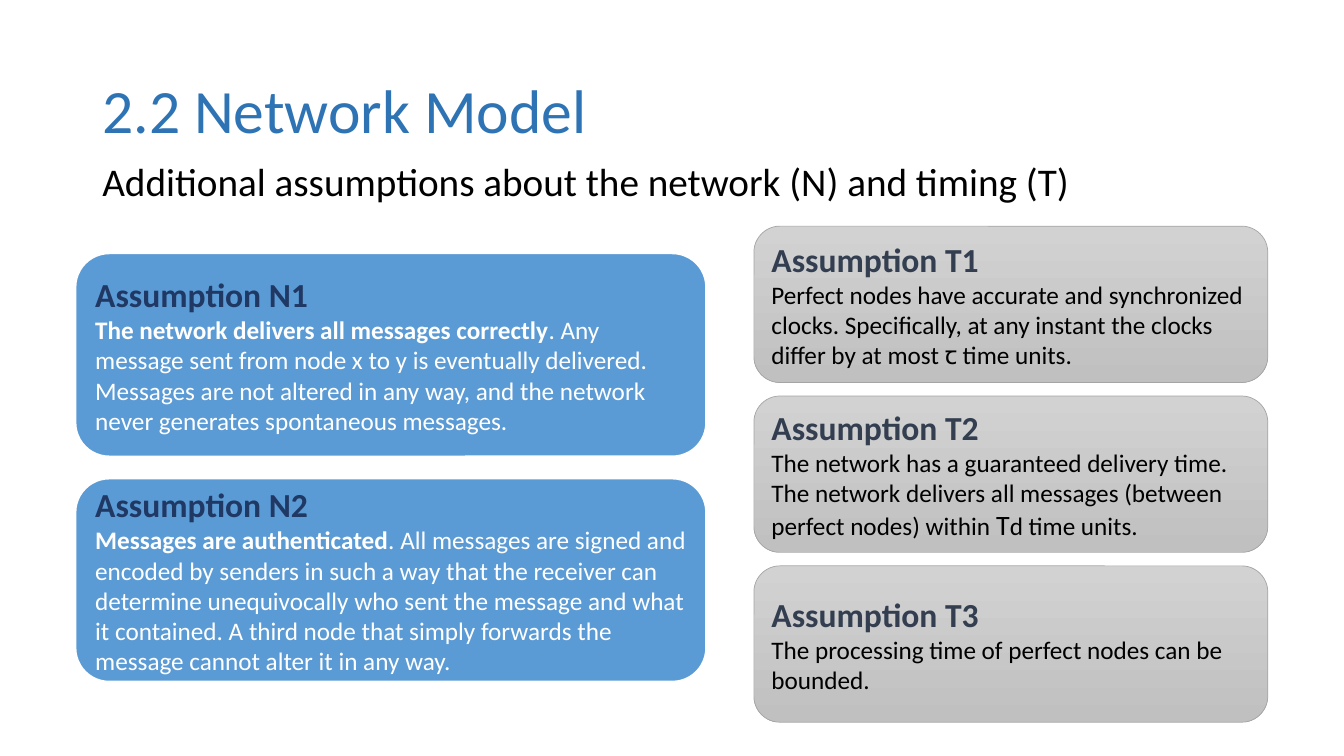
from pptx import Presentation
from pptx.dml.color import RGBColor
from pptx.enum import shapes, text
from pptx.util import Cm, Pt

COLORS = {
    "title": "2E74B5", "black": "000000", "white": "FFFFFF",
    "network": "5B9BD5", "network_head": "203864",
    "timing_top": "D2D2D2", "timing_bottom": "C0C0C0",
    "timing_line": "A5A5A5", "timing_head": "333F50",
}

# Each assumption: heading, then runs of (text, format)
NETWORK = [
    ("Assumption N1", [
        ("The network delivers all messages correctly", {"bold": True}),
        (". Any message sent from node x to y is eventually delivered. "
         "Messages are not altered in any way, and the network never "
         "generates spontaneous messages.", {})]),
    ("Assumption N2", [
        ("Messages are authenticated", {"bold": True}),
        (". All messages are signed and encoded by senders in such a way that "
         "the receiver can determine unequivocally who sent the message and "
         "what it contained. A third node that simply forwards the message "
         "cannot alter it in any way.", {})]),
]
TIMING = [
    ("Assumption T1", [
        ("Perfect nodes have accurate and synchronized clocks. Specifically, "
         "at any instant the clocks differ by at most ꞇ time units.", {})]),
    ("Assumption T2", [
        ("The network has a guaranteed delivery time. The network delivers "
         "all messages (between perfect nodes) within ", {}),
        ("T", {"size": 20}), ("d time units.", {})]),
    ("Assumption T3", [
        ("The processing time of perfect nodes can be bounded.", {})]),
]


def rgb(name):
    return RGBColor.from_string(COLORS[name])


def add_run(p, words, size=18, color="black", bold=False):
    r = p.add_run()
    r.text = words
    r.font.name = "Calibri"
    r.font.size = Pt(size)
    r.font.bold = bold
    r.font.color.rgb = rgb(color)


def add_line(s, box, words, anchor, **style):
    """One line of text in a box of (left, top, width, height) in cm."""
    tf = s.shapes.add_textbox(*map(Cm, box)).text_frame
    tf.word_wrap = True
    tf.vertical_anchor = anchor
    p = tf.paragraphs[0]
    p.line_spacing = 0.9
    add_run(p, words, **style)


def fill_network(sp):
    sp.fill.solid()
    sp.fill.fore_color.rgb = rgb("network")
    sp.line.color.rgb = rgb("white")
    sp.line.width = Pt(1.5)


def fill_timing(sp):
    sp.fill.gradient()
    sp.fill.gradient_angle = 270
    for stop, name in zip(sp.fill.gradient_stops, ("timing_top", "timing_bottom")):
        stop.color.rgb = rgb(name)
    sp.line.color.rgb = rgb("timing_line")
    sp.line.width = Pt(0.5)


def add_card(s, box, heading, body, paint, head_color, body_color):
    sp = s.shapes.add_shape(shapes.MSO_SHAPE.ROUNDED_RECTANGLE, *map(Cm, box))
    sp.shadow.inherit = False
    paint(sp)
    tf = sp.text_frame
    tf.word_wrap = True
    tf.vertical_anchor = text.MSO_ANCHOR.MIDDLE
    head, para = tf.paragraphs[0], tf.add_paragraph()
    head.alignment = para.alignment = text.PP_ALIGN.LEFT
    add_run(head, heading, size=24, color=head_color, bold=True)
    for words, style in body:
        add_run(para, words, color=body_color, **style)


def add_column(s, box, cards, gap, **look):
    """Stack equal cards down the box, separated by gap."""
    left, top, width, height = box
    card_h = (height - gap * (len(cards) - 1)) / len(cards)
    for i, (heading, body) in enumerate(cards):
        place = (left, top + i * (card_h + gap), width, card_h)
        add_card(s, place, heading, body, **look)


def add_header(s, box):
    left, top, width, _ = box
    add_line(s, (left, top, width, 3.68), "2.2 Network Model",
             text.MSO_ANCHOR.MIDDLE, size=44, color="title")
    add_line(s, (left, top + 2.97, width, 1.73),
             "Additional assumptions about the network (N) and timing (T)",
             text.MSO_ANCHOR.TOP, size=28)


def main():
    prs = Presentation()
    prs.slide_width, prs.slide_height = Cm(33.87), Cm(19.05)
    s = prs.slides.add_slide(prs.slide_layouts[6])

    # Title and subtitle
    add_header(s, (2.33, 1.01, 29.21, 4.7))
    # Network assumptions on the left
    add_column(s, (1.9, 6.38, 15.9, 10.8), NETWORK, 0.55, paint=fill_network,
               head_color="network_head", body_color="white")
    # Timing assumptions on the right
    add_column(s, (19, 5.7, 12.95, 12.5), TIMING, 0.34, paint=fill_timing,
               head_color="timing_head", body_color="black")

    prs.save("out.pptx")


if __name__ == "__main__":
    main()
